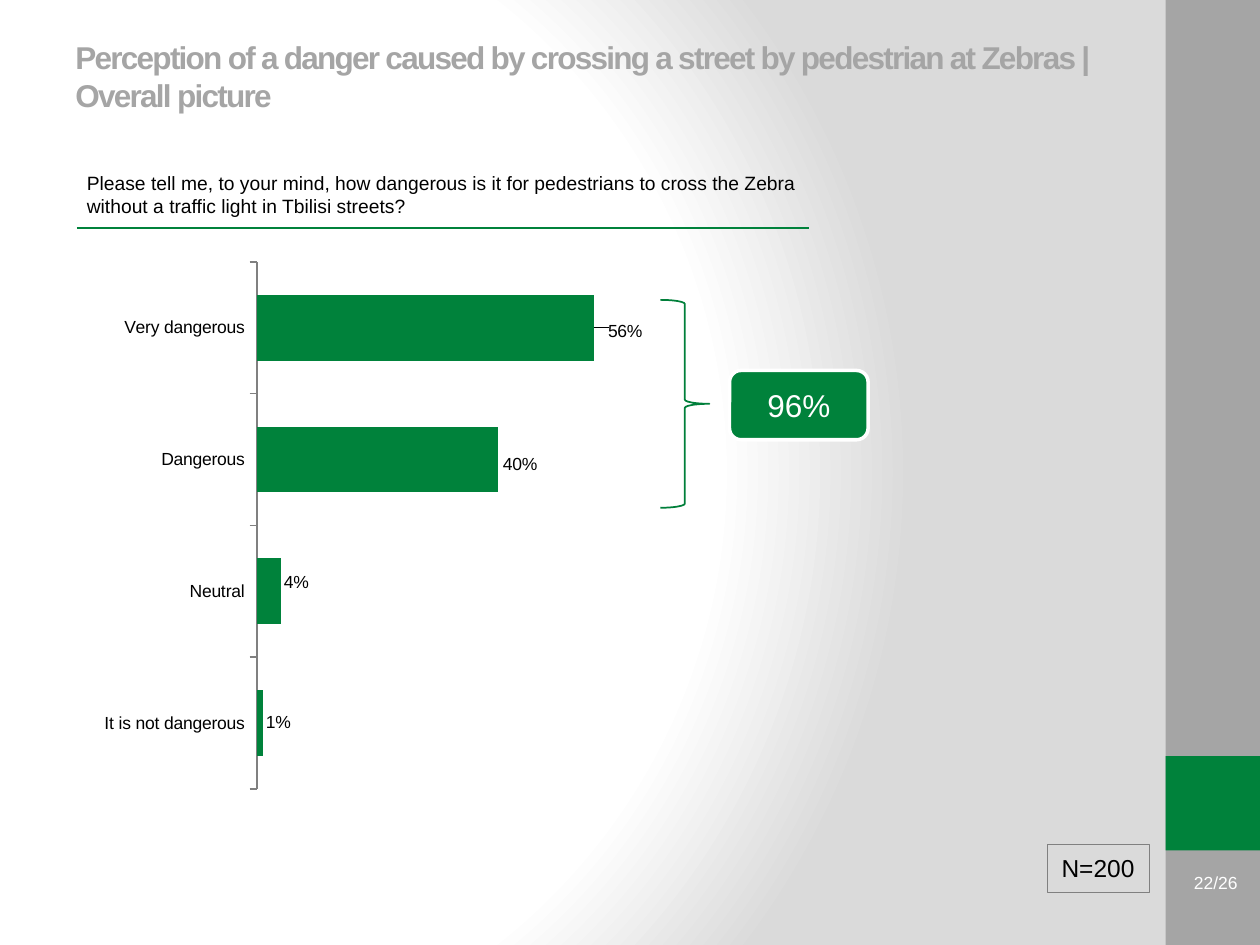
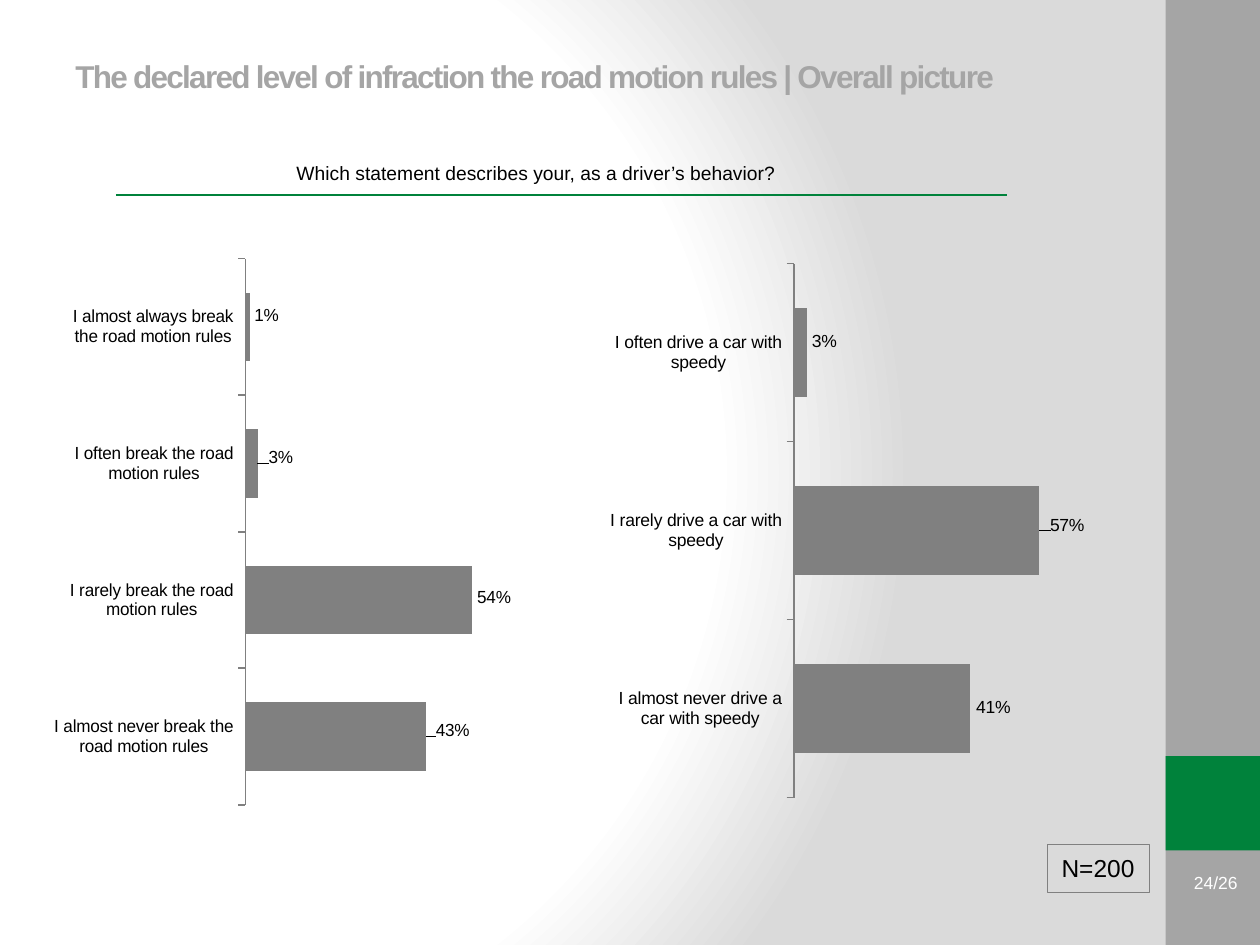
from pptx import Presentation
from pptx import util as u
from pptx.chart.data import CategoryChartData
from pptx.dml.color import RGBColor
from pptx.enum import chart as charts, shapes, text
from pptx.oxml import parse_xml
from pptx.oxml.ns import nsdecls

FONT = "Arial"
BLACK, WHITE = "000000", "FFFFFF"
GREEN, BRACE_GREEN = "00823B", "007F3A"
BAND_GREY, BAR_GREY, EDGE_GREY = "A5A5A5", "808080", "DADADA"
SHAPE = shapes.MSO_SHAPE
LEFT, CENTER, RIGHT = text.PP_ALIGN.LEFT, text.PP_ALIGN.CENTER, text.PP_ALIGN.RIGHT
TOP, MIDDLE = text.MSO_ANCHOR.TOP, text.MSO_ANCHOR.MIDDLE


def colour(value):
    return RGBColor.from_string(value)


def inches(box):
    return [u.Inches(length) for length in box]


def write(shape, words, size, ink=BLACK, align=LEFT, anchor=TOP, bold=False, spacing=0):
    frame = shape.text_frame
    frame.word_wrap = True
    frame.vertical_anchor = anchor
    frame.text = words
    paragraph = frame.paragraphs[0]
    paragraph.alignment = align
    for run in paragraph.runs:
        run.font.name, run.font.size, run.font.bold = FONT, u.Pt(size), bold
        run.font.color.rgb = colour(ink)
        if spacing:
            run.font._element.set("spc", str(spacing * 100))


def add_text(slide, box, words, size, **style):
    write(slide.shapes.add_textbox(*inches(box)), words, size, **style)


def add_shape(slide, kind, box, fill=None, line=None, width=1):
    shape = slide.shapes.add_shape(kind, *inches(box))
    shape.shadow.inherit = False
    if fill:
        shape.fill.solid()
        shape.fill.fore_color.rgb = colour(fill)
    else:
        shape.fill.background()
    if line:
        shape.line.color.rgb = colour(line)
        shape.line.width = u.Pt(width)
    else:
        shape.line.fill.background()
    return shape


def add_rule(slide, left, right, top):
    rule = slide.shapes.add_connector(
        shapes.MSO_CONNECTOR.STRAIGHT, *inches((left, top, right, top)))
    rule.line.color.rgb = colour(GREEN)
    rule.line.width = u.Pt(1)
    rule._element.spPr.append(parse_xml(f"<a:effectLst {nsdecls('a')}/>"))


def set_background(slide):
    """Circular gradient, white at the left and grey towards the right."""
    slide.background.fill.solid()
    properties = slide._element.cSld.bg.bgPr
    stops = "".join(
        f'<a:gs pos="{place * 1000}"><a:srgbClr val="{value}"/></a:gs>'
        for place, value in ((0, WHITE), (75, WHITE), (100, EDGE_GREY)))
    properties.replace(properties[0], parse_xml(
        f'<a:gradFill {nsdecls("a")} rotWithShape="1"><a:gsLst>{stops}</a:gsLst>'
        '<a:path path="circle"><a:fillToRect l="20000" t="50000" r="100000" b="50000"/>'
        '</a:path></a:gradFill>'))


def add_side_band(slide, box, page):
    left, top, width, height = box
    add_shape(slide, SHAPE.RECTANGLE, box, BAND_GREY)
    add_shape(slide, SHAPE.RECTANGLE, (left, top + 6, width, width), GREEN)
    add_text(slide, (left + 0.08, top + 6.79, 0.59, 0.42), page, 10,
             ink=WHITE, align=RIGHT, anchor=MIDDLE)


def add_survey_slide(presentation, title, page):
    """Slide with the shared background, band, title and sample size."""
    slide = presentation.slides.add_slide(presentation.slide_layouts[6])
    set_background(slide)
    add_side_band(slide, (9.25, 0, 0.75, 7.5), page)
    add_text(slide, (0.5, 0.3, 8.33, 0.61), title, 18, ink=BAND_GREY,
             anchor=MIDDLE, bold=True, spacing=-1)
    sample = add_shape(slide, SHAPE.RECTANGLE, (8.31, 6.7, 0.81, 0.38),
                       line=BAR_GREY, width=0.5)
    sample.text_frame.margin_left = sample.text_frame.margin_right = 0
    write(sample, "N=200", 14, align=CENTER, anchor=MIDDLE)
    return slide


def manual_layout(fractions, modes=""):
    values = "".join(f'<c:{name} val="{value:.3f}"/>' for name, value in fractions.items())
    return parse_xml(f"<c:layout {nsdecls('c')}><c:manualLayout>{modes}{values}"
                     "</c:manualLayout></c:layout>")


def place_plot(chart, plot):
    area = chart._chartSpace.chart.plotArea
    for layout in area.findall("{*}layout"):
        area.remove(layout)
    modes = ('<c:layoutTarget val="inner"/><c:xMode val="edge"/><c:yMode val="edge"/>')
    area.insert(0, manual_layout(dict(zip("xywh", plot)), modes))


def style_font(font, size):
    font.name, font.size = FONT, u.Pt(size)
    font.color.rgb = colour(BLACK)


def add_bar_chart(slide, box, plot, answers, fill):
    """answers: category, share, and how far its label is moved in inches."""
    data = CategoryChartData(number_format="0%")
    data.categories = [answer for answer, _, _ in answers]
    data.add_series("Series 1", [share for _, share, _ in answers])
    chart = slide.shapes.add_chart(
        charts.XL_CHART_TYPE.BAR_CLUSTERED, *inches(box), data).chart
    chart.has_legend = chart.has_title = False
    style_font(chart.font, 12)
    place_plot(chart, plot)

    # Axes
    category_axis, value_axis = chart.category_axis, chart.value_axis
    category_axis.reverse_order = True
    category_axis.has_major_gridlines = False
    category_axis.major_tick_mark = charts.XL_TICK_MARK.OUTSIDE
    category_axis.format.line.color.rgb = colour(BAR_GREY)
    category_axis.format.line.width = u.Pt(1)
    style_font(category_axis.tick_labels.font, 10)
    value_axis.minimum_scale, value_axis.maximum_scale = 0, 0.6
    value_axis.has_major_gridlines = False
    value_axis.visible = False

    # Bars
    bars = chart.plots[0]
    bars.gap_width, bars.vary_by_categories = 100, False
    series = bars.series[0]
    series.format.fill.solid()
    series.format.fill.fore_color.rgb = colour(fill)

    # Value labels
    labels = series.data_labels
    labels.show_value = True
    labels.number_format, labels.number_format_is_linked = "0%", False
    style_font(labels.font, 10)
    for index, (_, _, (right, down)) in enumerate(answers):
        label = series.points[index].data_label
        style_font(label.font, 10)
        label.position = charts.XL_LABEL_POSITION.OUTSIDE_END
        label._get_or_add_dLbl().insert(
            1, manual_layout({"x": right / box[2], "y": down / box[3]}))


def add_total(slide, box, total):
    """Brace over the two upper bars, leading to their sum."""
    left, top, width, height = box
    add_shape(slide, SHAPE.RIGHT_BRACE, (left, top, 0.39, height), line=BRACE_GREEN)
    badge = add_shape(slide, SHAPE.ROUNDED_RECTANGLE,
                      (left + width - 1.1, top + 0.56, 1.1, 0.55), GREEN, WHITE, 2)
    write(badge, total, 18, ink=WHITE, align=CENTER, anchor=MIDDLE)


def build_danger_slide(presentation):
    slide = add_survey_slide(
        presentation, "Perception of a danger caused by crossing a street by pedestrian "
        "at Zebras | Overall picture", "22/26")
    add_text(slide, (0.59, 1.31, 5.98, 0.47),
             "Please tell me, to your mind, how dangerous is it for pedestrians to cross "
             "the Zebra without a traffic light in Tbilisi streets?", 11)
    add_rule(slide, 0.61, 6.42, 1.81)
    add_bar_chart(slide, (-0.67, 1.83, 6.29, 4.44), (0.431, 0.056, 0.456, 0.944), [
        ("Very dangerous", 0.56, (0.07, 0.03)),
        ("Dangerous", 0.4, (0, 0.04)),
        ("Neutral", 0.04, (-0.02, -0.07)),
        ("It is not dangerous", 0.01, (-0.02, -0.01)),
    ], GREEN)
    add_total(slide, (5.24, 2.38, 1.65, 1.65), "96%")


def build_infraction_slide(presentation):
    slide = add_survey_slide(
        presentation, "The declared level of infraction the road motion rules "
        "| Overall picture", "24/26")
    add_rule(slide, 0.92, 7.99, 1.55)
    add_text(slide, (0.67, 1.23, 7.17, 0.29),
             "Which statement describes your, as a driver’s behavior?", 11, align=CENTER)
    add_bar_chart(slide, (0.43, 1.94, 4.02, 4.49), (0.364, 0.025, 0.509, 0.966), [
        ("I almost always break the road motion rules", 0.01, (0, -0.09)),
        ("I often break the road motion rules", 0.03, (0.05, -0.05)),
        ("I rarely break the road motion rules", 0.54, (0, -0.02)),
        ("I almost never break the road motion rules", 0.43, (0.04, -0.05)),
    ], BAR_GREY)
    add_bar_chart(slide, (4.84, 1.98, 4.02, 4.49), (0.364, 0.025, 0.509, 0.944), [
        ("I often drive a car with speedy", 0.03, (0, -0.09)),
        ("I rarely drive a car with speedy", 0.57, (0.05, -0.04)),
        ("I almost never drive a car with speedy", 0.41, (0.01, -0.01)),
    ], BAR_GREY)


def main():
    presentation = Presentation()
    presentation.slide_width, presentation.slide_height = inches((10, 7.5))
    build_danger_slide(presentation)
    build_infraction_slide(presentation)
    presentation.save("out.pptx")


if __name__ == "__main__":
    main()
